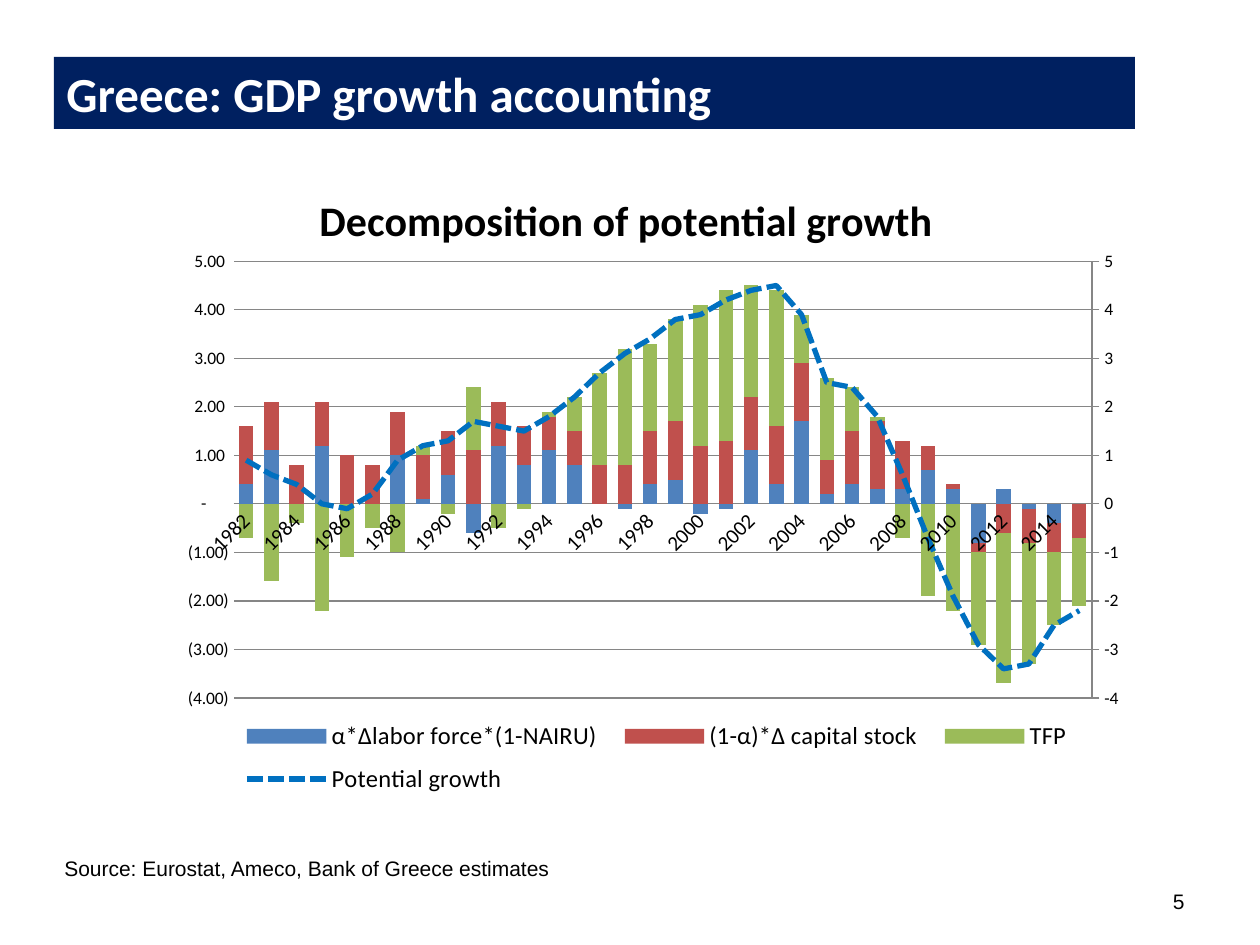
from dataclasses import dataclass

from lxml.etree import SubElement
from pptx import Presentation
from pptx.chart.data import CategoryChartData
from pptx.dml.color import RGBColor
from pptx.enum.chart import XL_CHART_TYPE, XL_LEGEND_POSITION, XL_MARKER_STYLE, XL_TICK_MARK
from pptx.enum.dml import MSO_LINE
from pptx.enum.shapes import MSO_SHAPE
from pptx.enum.text import MSO_ANCHOR, PP_ALIGN
from pptx.oxml import parse_xml
from pptx.oxml.ns import nsdecls, qn
from pptx.util import Emu, Pt

EMU_PER_PX = 914400 / 126


@dataclass(frozen=True)
class Theme:
    navy: str = "002060"
    white: str = "FFFFFF"
    black: str = "000000"
    grid: str = "868686"
    heading_font: str = "Calibri"
    note_font: str = "Arial"
    heading_size: int = 28
    title_size: int = 24
    legend_size: int = 14
    note_size: int = 12
    axis_size: int = 10


@dataclass(frozen=True)
class Box:
    left: int
    top: int
    width: int
    height: int

    def emu(self) -> list[Emu]:
        return [px(n) for n in (self.left, self.top, self.width, self.height)]


@dataclass(frozen=True)
class Label:
    text: str
    box: Box
    font: str
    size: int
    color: str
    bold: bool = False
    fill: str | None = None
    align: PP_ALIGN = PP_ALIGN.LEFT
    anchor: MSO_ANCHOR = MSO_ANCHOR.TOP
    wrap: bool = True


@dataclass(frozen=True)
class Component:
    name: str
    color: str
    values: tuple[float | None, ...]


THEME = Theme()
YEARS = [str(year) for year in range(1982, 2016)]
NUMBER_FORMAT = '_(* #,##0.00_);_(* \\(#,##0.00\\);_(* "-"??_);_(@_)'

LABELS = (
    Label("5", Box(903, 876, 294, 50), THEME.note_font, THEME.note_size, THEME.black,
          align=PP_ALIGN.RIGHT, anchor=MSO_ANCHOR.MIDDLE),
    Label("Greece: GDP growth accounting", Box(54, 57, 1081, 72), THEME.heading_font,
          THEME.heading_size, THEME.white, bold=True, fill=THEME.navy, anchor=MSO_ANCHOR.MIDDLE),
    Label("Source: Eurostat, Ameco, Bank of Greece estimates", Box(52, 849, 515, 38),
          THEME.note_font, THEME.note_size, THEME.black, wrap=False),
)

COMPONENTS = (
    Component("α*Δlabor force*(1-NAIRU)", "4F81BD", (
        0.4, 1.1, 0, 1.2, 0, 0, 1, 0.1, 0.6, -0.6, 1.2, 0.8, 1.1, 0.8, 0, -0.1, 0.4,
        0.5, -0.2, -0.1, 1.1, 0.4, 1.7, 0.2, 0.4, 0.3, 0.3, 0.7, 0.3, -0.8, 0.3, -0.1, -0.4, None)),
    Component("(1-α)*Δ capital stock", "C0504D", (
        1.2, 1, 0.8, 0.9, 1, 0.8, 0.9, 0.9, 0.9, 1.1, 0.9, 0.8, 0.7, 0.7, 0.8, 0.8, 1.1,
        1.2, 1.2, 1.3, 1.1, 1.2, 1.2, 0.7, 1.1, 1.4, 1, 0.5, 0.1, -0.2, -0.6, -0.7, -0.6, -0.7)),
    Component("TFP", "9BBB59", (
        -0.7, -1.6, -0.4, -2.2, -1.1, -0.5, -1, 0.2, -0.2, 1.3, -0.5, -0.1, 0.1, 0.7, 1.9, 2.4, 1.8,
        2.1, 2.9, 3.1, 2.3, 2.8, 1, 1.7, 0.9, 0.1, -0.7, -1.9, -2.2, -1.9, -3.1, -2.5, -1.5, -1.4)),
    Component("Potential growth", "0070C0", (
        0.9, 0.6, 0.4, 0, -0.1, 0.2, 0.9, 1.2, 1.3, 1.7, 1.6, 1.5, 1.8, 2.2, 2.7, 3.1, 3.4,
        3.8, 3.9, 4.2, 4.4, 4.5, 3.9, 2.5, 2.4, 1.8, 0.6, -0.7, -1.9, -2.9, -3.4, -3.3, -2.5, -2.2)),
)


def px(length: int) -> Emu:
    return Emu(round(length * EMU_PER_PX))


def rgb(color: str) -> RGBColor:
    return RGBColor.from_string(color)


def draw_label(slide, label: Label) -> None:
    if label.fill:
        shape = slide.shapes.add_shape(MSO_SHAPE.RECTANGLE, *label.box.emu())
        shape.shadow.inherit = False
        shape.fill.solid()
        shape.fill.fore_color.rgb = rgb(label.fill)
        shape.line.fill.background()
    else:
        shape = slide.shapes.add_textbox(*label.box.emu())
    frame = shape.text_frame
    frame.word_wrap = label.wrap
    frame.vertical_anchor = label.anchor
    paragraph = frame.paragraphs[0]
    paragraph.alignment = label.align
    run = paragraph.add_run()
    run.text = label.text
    run.font.name = label.font
    run.font.size = Pt(label.size)
    run.font.bold = label.bold
    run.font.color.rgb = rgb(label.color)


def set_layout(element, position: int, inner: bool, **fractions: float) -> None:
    for old in element.findall(qn("c:layout")):
        element.remove(old)
    layout = element.makeelement(qn("c:layout"), {})
    element.insert(position, layout)
    manual = SubElement(layout, qn("c:manualLayout"))
    if inner:
        SubElement(manual, qn("c:layoutTarget"), val="inner")
    for side in "xy":
        SubElement(manual, qn(f"c:{side}Mode"), val="edge")
    for name, value in fractions.items():
        SubElement(manual, qn(f"c:{name}"), val=str(value))


def move_last_series_to_line(chart) -> None:
    bars = chart.plots[0]._element
    series = bars.findall(qn("c:ser"))[-1]
    invert = series.find(qn("c:invertIfNegative"))
    if invert is not None:
        series.remove(invert)
    line_plot = parse_xml(
        f'<c:lineChart {nsdecls("c")}><c:grouping val="standard"/><c:varyColors val="0"/>'
        '<c:marker val="1"/><c:axId val="50010"/><c:axId val="50020"/></c:lineChart>')
    line_plot.insert(2, series)
    bars.addnext(line_plot)
    right_axis = parse_xml(
        f'<c:valAx {nsdecls("c", "a")}><c:axId val="50020"/>'
        '<c:scaling><c:orientation val="minMax"/><c:max val="5"/><c:min val="-4"/></c:scaling>'
        '<c:delete val="0"/><c:axPos val="r"/><c:numFmt formatCode="General" sourceLinked="0"/>'
        '<c:majorTickMark val="out"/><c:minorTickMark val="none"/><c:tickLblPos val="nextTo"/>'
        f'<c:spPr><a:ln w="9525"><a:solidFill><a:srgbClr val="{THEME.grid}"/></a:solidFill></a:ln></c:spPr>'
        '<c:crossAx val="50010"/><c:crosses val="max"/><c:majorUnit val="1"/></c:valAx>')
    hidden_axis = parse_xml(
        f'<c:catAx {nsdecls("c")}><c:axId val="50010"/>'
        '<c:scaling><c:orientation val="minMax"/></c:scaling><c:delete val="1"/>'
        '<c:axPos val="b"/><c:crossAx val="50020"/><c:crosses val="autoZero"/></c:catAx>')
    left_axis = chart.value_axis._element
    left_axis.addnext(right_axis)
    right_axis.addnext(hidden_axis)


def style_axes(chart) -> None:
    years = chart.category_axis
    years.major_tick_mark = XL_TICK_MARK.NONE
    years.tick_labels.font.size = Pt(THEME.note_size)
    years.format.line.color.rgb = rgb(THEME.grid)
    years._element.find(qn("c:txPr")).find(qn("a:bodyPr")).set("rot", "-2700000")
    skip = years._element.makeelement(qn("c:tickLblSkip"), {"val": "2"})
    years._element.find(qn("c:noMultiLvlLbl")).addprevious(skip)
    growth = chart.value_axis
    growth.minimum_scale, growth.maximum_scale, growth.major_unit = -4, 5, 1
    growth.major_tick_mark = XL_TICK_MARK.NONE
    growth.format.line.fill.background()
    growth.major_gridlines.format.line.color.rgb = rgb(THEME.grid)
    growth.tick_labels.number_format = NUMBER_FORMAT
    growth.tick_labels.number_format_is_linked = False


def draw_chart(slide, box: Box) -> None:
    data = CategoryChartData(number_format="0.0")
    data.categories = YEARS
    for component in COMPONENTS:
        data.add_series(component.name, component.values)
    chart = slide.shapes.add_chart(XL_CHART_TYPE.COLUMN_STACKED, *box.emu(), data).chart
    chart.font.name = THEME.heading_font
    chart.font.size = Pt(THEME.axis_size)
    chart.font.color.rgb = rgb(THEME.black)

    run = chart.chart_title.text_frame.paragraphs[0].add_run()
    run.text = "Decomposition of potential growth"
    run.font.size = Pt(THEME.title_size)
    run.font.bold = True
    chart.chart_title.include_in_layout = False

    chart.has_legend = True
    chart.legend.position = XL_LEGEND_POSITION.BOTTOM
    chart.legend.include_in_layout = False
    chart.legend.font.size = Pt(THEME.legend_size)

    style_axes(chart)
    move_last_series_to_line(chart)
    bars, lines = chart.plots
    bars.gap_width, bars.overlap, bars.vary_by_categories = 75, 100, False
    for series, component in zip(bars.series, COMPONENTS):
        series.format.fill.solid()
        series.format.fill.fore_color.rgb = rgb(component.color)
        series.invert_if_negative = False
    potential = lines.series[0]
    potential.format.line.color.rgb = rgb(COMPONENTS[-1].color)
    potential.format.line.width = Pt(3)
    potential.format.line.dash_style = MSO_LINE.SQUARE_DOT
    potential.marker.style = XL_MARKER_STYLE.NONE
    potential.smooth = False
    set_layout(bars._element.getparent(), 0, True, x=0.116, y=0.147, w=0.84, h=0.667)
    set_layout(chart.legend._element, 1, False, x=0.11, y=0.83, w=0.84, h=0.15)


def main() -> None:
    presentation = Presentation()
    presentation.slide_width, presentation.slide_height = px(1260), px(945)
    slide = presentation.slides.add_slide(presentation.slide_layouts[6])
    for label in LABELS:
        draw_label(slide, label)
    draw_chart(slide, Box(115, 165, 1022, 655))
    presentation.save("out.pptx")


if __name__ == "__main__":
    main()
